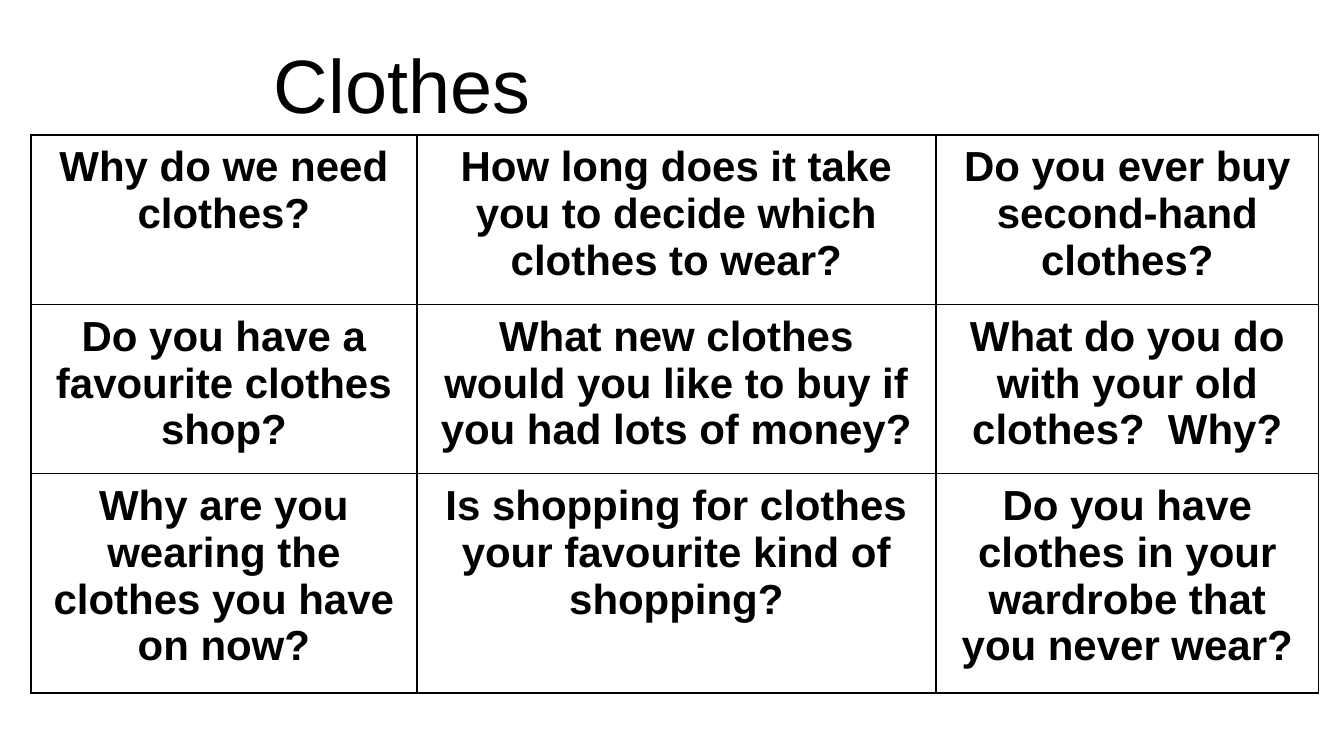
from lxml import etree
from pptx import Presentation
from pptx.dml.color import RGBColor
from pptx.enum.text import MSO_ANCHOR, PP_ALIGN
from pptx.oxml.ns import qn
from pptx.util import Pt

PX = 914400 / 100.8
LEFT, CENTER = PP_ALIGN.LEFT, PP_ALIGN.CENTER
TOP, BOTTOM = MSO_ANCHOR.TOP, MSO_ANCHOR.BOTTOM
COLORS = {"ink": "000000", "paper": "FFFFFF"}
COLUMN_WIDTHS = [386, 519, 383]
ROW_HEIGHTS = [167, 167, 158]
QUESTIONS = [
    ["Why do we need clothes?",
     "How long does it take you to decide which clothes to wear?",
     "Do you ever buy second-hand clothes?"],
    ["Do you have a favourite clothes shop?",
     "What new clothes would you like to buy if you had lots of money?",
     "What do you do with your old clothes?  Why?"],
    ["Why are you wearing the clothes you have on now?",
     "Is shopping for clothes your favourite kind of shopping?",
     "Do you have clothes in your wardrobe that you never wear?"],
]


def px(length):
    return round(length * PX)


def write(frame, text, size, bold=False, align=LEFT, spacing=1.0):
    frame.word_wrap = True
    paragraph = frame.paragraphs[0]
    paragraph.alignment = align
    paragraph.line_spacing = spacing
    run = paragraph.add_run()
    run.text = text
    run.font.name = "Arial"
    run.font.size = Pt(size)
    run.font.bold = bold
    run.font.color.rgb = RGBColor.from_string(COLORS["ink"])


presentation = Presentation()
presentation.slide_width = px(1344)
presentation.slide_height = px(756)
slide = presentation.slides.add_slide(presentation.slide_layouts[6])

title = slide.shapes.add_textbox(px(264), px(32), px(987), px(103))
title.text_frame.vertical_anchor = BOTTOM
write(title.text_frame, "Clothes", size=54, spacing=0.9)

table = slide.shapes.add_table(
    len(ROW_HEIGHTS), len(COLUMN_WIDTHS), px(31), px(135),
    px(sum(COLUMN_WIDTHS)), px(sum(ROW_HEIGHTS))).table
table.first_row = False
table.horz_banding = False
for column, width in zip(table.columns, COLUMN_WIDTHS):
    column.width = px(width)
for row, height, questions in zip(table.rows, ROW_HEIGHTS, QUESTIONS):
    row.height = px(height)
    for cell, question in zip(row.cells, questions):
        cell.margin_left = cell.margin_right = px(18)
        cell.margin_top = cell.margin_bottom = px(9)
        cell.vertical_anchor = TOP
        write(cell.text_frame, question, size=30, bold=True, align=CENTER)
        properties = cell._tc.get_or_add_tcPr()
        for side in ("a:lnL", "a:lnR", "a:lnT", "a:lnB"):
            border = etree.SubElement(properties, qn(side), w=str(Pt(1)))
            fill = etree.SubElement(border, qn("a:solidFill"))
            etree.SubElement(fill, qn("a:srgbClr"), val=COLORS["ink"])
        cell.fill.solid()
        cell.fill.fore_color.rgb = RGBColor.from_string(COLORS["paper"])

presentation.save("out.pptx")
